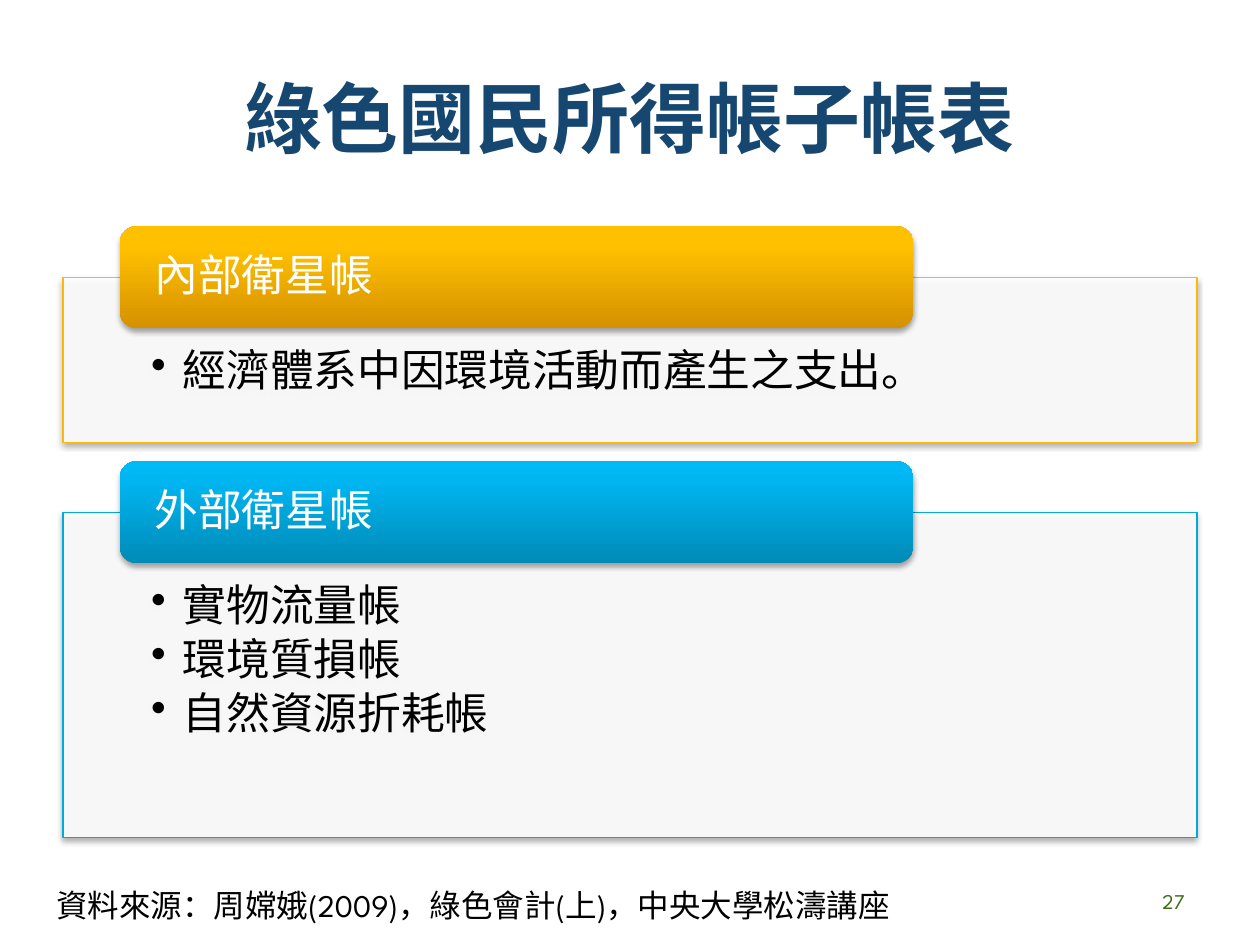
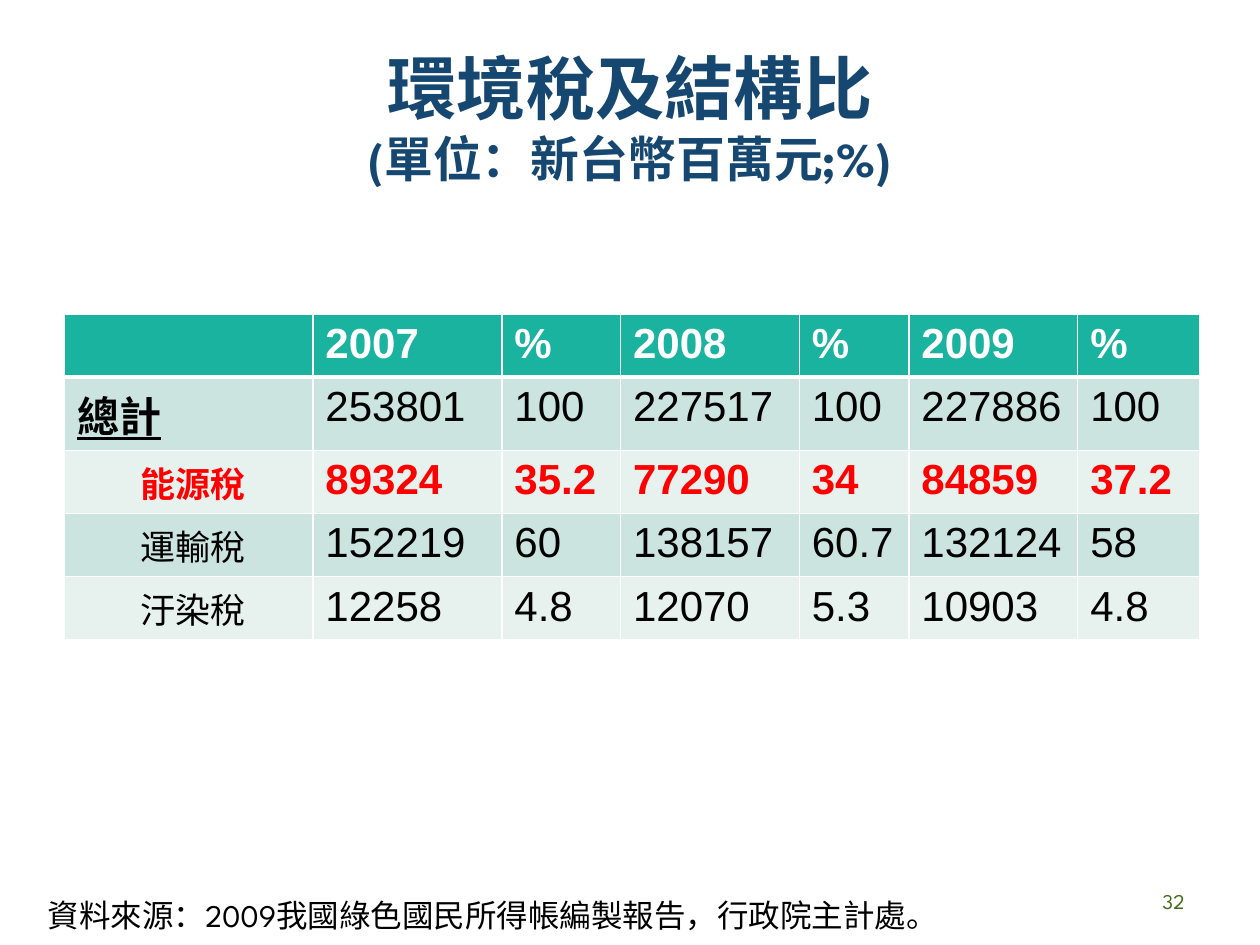
from copy import deepcopy
from dataclasses import dataclass

from lxml import etree
from pptx import Presentation
from pptx.dml.color import RGBColor
from pptx.enum.shapes import MSO_SHAPE
from pptx.enum.text import MSO_ANCHOR, PP_ALIGN
from pptx.oxml.ns import qn
from pptx.util import Pt

RECTANGLE, ROUNDED = MSO_SHAPE.RECTANGLE, MSO_SHAPE.ROUNDED_RECTANGLE
TOP, MIDDLE = MSO_ANCHOR.TOP, MSO_ANCHOR.MIDDLE
LEFT, CENTER, RIGHT = PP_ALIGN.LEFT, PP_ALIGN.CENTER, PP_ALIGN.RIGHT

TEXT_FONT, TABLE_FONT = "League Spartan", "Arial"
BLACK, WHITE, RED = "000000", "FFFFFF", "FF0000"
TITLE_BLUE, NUMBER_GREEN = "164770", "3F6C19"
HEADER_TEAL, BANDS = "1AB39F", ("CBE4DF", "E7F2EF")

MARGIN, CONTENT_WIDTH = 36, 648
LABEL_HEIGHT = 58.4
BULLET_INDENT = 18


@dataclass
class Box:
    left: float
    top: float
    width: float
    height: float

    def lengths(self) -> list:
        return [Pt(value) for value in (self.left, self.top, self.width, self.height)]


@dataclass
class Line:
    text: str
    size: float


@dataclass
class Account:
    label: str
    items: list[str]
    top: float
    height: float
    outline: str
    gradient: list[str]


@dataclass
class TaxRow:
    label: str
    values: list[str]
    height: float
    color: str = BLACK
    bold: bool = False
    total: bool = False


ACCOUNTS = [
    Account("內部衛星帳", ["經濟體系中因環境活動而產生之支出。"], 158.5, 94.3,
            "FDB709", ["D59100", "FFC000", "FFC200"]),
    Account("外部衛星帳", ["實物流量帳", "環境質損帳", "自然資源折耗帳"], 292.8, 185.8,
            "00AAD9", ["008AB6", "00B5F0", "00BAF6"]),
]
GRADIENT_POSITIONS = (0, 0.8, 1)

TAX_COLUMNS = ["", "2007", "%", "2008", "%", "2009", "%"]
COLUMN_WIDTHS = [141.8, 108, 67.8, 102.2, 62.6, 96.5, 69.8]
HEADER_HEIGHT = 33.2
TAX_ROWS = [
    TaxRow("總計", ["253801", "100", "227517", "100", "227886", "100"], 42, total=True),
    TaxRow("能源稅", ["89324", "35.2", "77290", "34", "84859", "37.2"], 36, RED, True),
    TaxRow("運輸稅", ["152219", "60", "138157", "60.7", "132124", "58"], 36),
    TaxRow("汙染稅", ["12258", "4.8", "12070", "5.3", "10903", "4.8"], 36),
]


def rgb(color: str) -> RGBColor:
    return RGBColor.from_string(color)


def add_child(parent, tag: str, **attributes):
    return etree.SubElement(parent, qn(tag), {name: str(value) for name, value in attributes.items()})


def style_font(font, size: float, color: str, bold: bool = False, name: str = TEXT_FONT) -> None:
    font.name, font.size, font.bold = name, Pt(size), bold
    font.color.rgb = rgb(color)


def set_insets(frame, horizontal: float, top: float, bottom: float) -> None:
    frame.margin_left = frame.margin_right = Pt(horizontal)
    frame.margin_top, frame.margin_bottom = Pt(top), Pt(bottom)


def add_text(slide, box: Box, lines: list[Line], color: str, align=LEFT, anchor=TOP,
             bold: bool = False) -> None:
    """Write the lines as one paragraph, parted by line breaks."""
    frame = slide.shapes.add_textbox(*box.lengths()).text_frame
    frame.word_wrap, frame.vertical_anchor = True, anchor
    paragraph = frame.paragraphs[0]
    paragraph.alignment = align
    for index, line in enumerate(lines):
        if index:
            paragraph.add_line_break()
        run = paragraph.add_run()
        run.text = line.text
        run.font.size = Pt(line.size)
    style_font(paragraph.font, lines[0].size, color, bold)


def add_frame(slide, title: list[Line], source: str, source_box: Box, number: int) -> None:
    """Add the title, source line and slide number."""
    add_text(slide, Box(MARGIN, 21.6, CONTENT_WIDTH, 90), title, TITLE_BLUE, CENTER, MIDDLE, True)
    add_text(slide, source_box, [Line(source, 18)], BLACK)
    add_text(slide, Box(516, 500.5, 168, 28.8), [Line(str(number), 12)], NUMBER_GREEN, RIGHT, MIDDLE)


def add_shadowed_shape(slide, kind, box: Box):
    shape = slide.shapes.add_shape(kind, *box.lengths())
    shape.shadow.inherit = False
    effects = shape._element.spPr.find(qn("a:effectLst"))
    shadow = add_child(effects, "a:outerShdw", blurRad=Pt(3.1), dist=Pt(1.8),
                       dir=5400000, rotWithShape=0)
    add_child(add_child(shadow, "a:srgbClr", val=BLACK), "a:alpha", val=35000)
    return shape


def add_bullet(paragraph) -> None:
    properties = paragraph._p.get_or_add_pPr()
    properties.set("marL", str(Pt(BULLET_INDENT)))
    properties.set("indent", str(-Pt(BULLET_INDENT)))
    add_child(add_child(properties, "a:buClr"), "a:srgbClr", val=BLACK)
    add_child(properties, "a:buChar", char="•")


def add_panel(slide, account: Account) -> None:
    panel = add_shadowed_shape(slide, RECTANGLE,
                               Box(MARGIN, account.top, CONTENT_WIDTH, account.height))
    panel.fill.solid()
    panel.fill.fore_color.rgb = rgb(WHITE)
    fill_color = panel._element.spPr.find(qn("a:solidFill"))[0]
    add_child(fill_color, "a:alpha", val=90000)
    panel.line.color.rgb = rgb(account.outline)
    panel.line.width = Pt(0.75)
    frame = panel.text_frame
    frame.word_wrap, frame.vertical_anchor = True, TOP
    set_insets(frame, 50.4, 41, 13.7)
    for index, item in enumerate(account.items):
        paragraph = frame.add_paragraph() if index else frame.paragraphs[0]
        paragraph.text, paragraph.alignment = item, LEFT
        paragraph.line_spacing = 0.9
        if index:
            paragraph.space_before = Pt(3.8)
        add_bullet(paragraph)
        style_font(paragraph.font, 25, BLACK)


def add_label(slide, account: Account) -> None:
    """Add the rounded label centred on the top edge of its panel."""
    label = add_shadowed_shape(slide, ROUNDED,
                               Box(68.4, account.top - LABEL_HEIGHT / 2, 453.6, LABEL_HEIGHT))
    label.line.fill.background()
    label.fill.gradient()
    label.fill.gradient_angle = 90
    stop_list = label._element.spPr.find(qn("a:gradFill")).find(qn("a:gsLst"))
    stop_list.append(deepcopy(stop_list[0]))
    for stop, position, color in zip(label.fill.gradient_stops, GRADIENT_POSITIONS, account.gradient):
        stop.position, stop.color.rgb = position, rgb(color)
    frame = label.text_frame
    frame.word_wrap, frame.vertical_anchor = True, MIDDLE
    set_insets(frame, 17, 0, 0)
    paragraph = frame.paragraphs[0]
    paragraph.text, paragraph.alignment = account.label, LEFT
    paragraph.line_spacing = 0.9
    style_font(paragraph.font, 25, WHITE)


def style_cell(cell, fill: str, top_width: float, bottom_width: float) -> None:
    properties = cell._tc.get_or_add_tcPr()
    for side, width in (("L", 1), ("R", 1), ("T", top_width), ("B", bottom_width)):
        border = add_child(properties, f"a:ln{side}", w=Pt(width))
        add_child(add_child(border, "a:solidFill"), "a:srgbClr", val=WHITE)
    cell.fill.solid()
    cell.fill.fore_color.rgb = rgb(fill)
    set_insets(cell, 7.2, 3.6, 3.6)


def write_cell(cell, text: str, size: float, color: str, bold: bool):
    paragraph = cell.text_frame.paragraphs[0]
    paragraph.text = text
    style_font(paragraph.font, size, color, bold, TABLE_FONT)
    return paragraph


def add_tax_table(slide) -> None:
    heights = [HEADER_HEIGHT] + [row.height for row in TAX_ROWS]
    box = Box(37, 179.5, sum(COLUMN_WIDTHS), sum(heights))
    table = slide.shapes.add_table(len(heights), len(COLUMN_WIDTHS), *box.lengths()).table
    for column, width in zip(table.columns, COLUMN_WIDTHS):
        column.width = Pt(width)
    for row, height in zip(table.rows, heights):
        row.height = Pt(height)
    for cell, text in zip(table.rows[0].cells, TAX_COLUMNS):
        style_cell(cell, HEADER_TEAL, 1, 3)
        write_cell(cell, text, 24, WHITE, True)
    for index, tax in enumerate(TAX_ROWS):
        cells = list(table.rows[index + 1].cells)
        for cell in cells:
            style_cell(cell, BANDS[index % 2], 1 if index else 3, 1)
        label = write_cell(cells[0], tax.label, 24 if tax.total else 20, tax.color,
                           tax.bold or tax.total)
        if tax.total:
            label.font.underline = True
        else:
            label._p.get_or_add_pPr().set("marL", str(Pt(36)))
        for cell, value in zip(cells[1:], tax.values):
            write_cell(cell, value, 24, tax.color, tax.bold)


def build_accounts_slide(slide) -> None:
    add_frame(slide, [Line("綠色國民所得帳子帳表", 44)],
              "資料來源：周嫦娥(2009)，綠色會計(上)，中央大學松濤講座",
              Box(25.2, 502.5, 623.5, 28.8), 27)
    for account in ACCOUNTS:
        add_panel(slide, account)
        add_label(slide, account)


def build_tax_slide(slide) -> None:
    add_frame(slide, [Line("環境稅及結構比", 39.6), Line("(單位：新台幣百萬元;%)", 27.9)],
              "資料來源：2009我國綠色國民所得帳編製報告，行政院主計處。",
              Box(20.2, 508.3, 635, 28.8), 32)
    add_tax_table(slide)


def main() -> None:
    presentation = Presentation()
    presentation.slide_width, presentation.slide_height = Pt(720), Pt(540)
    blank_layout = presentation.slide_layouts[6]
    for build in (build_accounts_slide, build_tax_slide):
        build(presentation.slides.add_slide(blank_layout))
    presentation.save("out.pptx")


if __name__ == "__main__":
    main()
